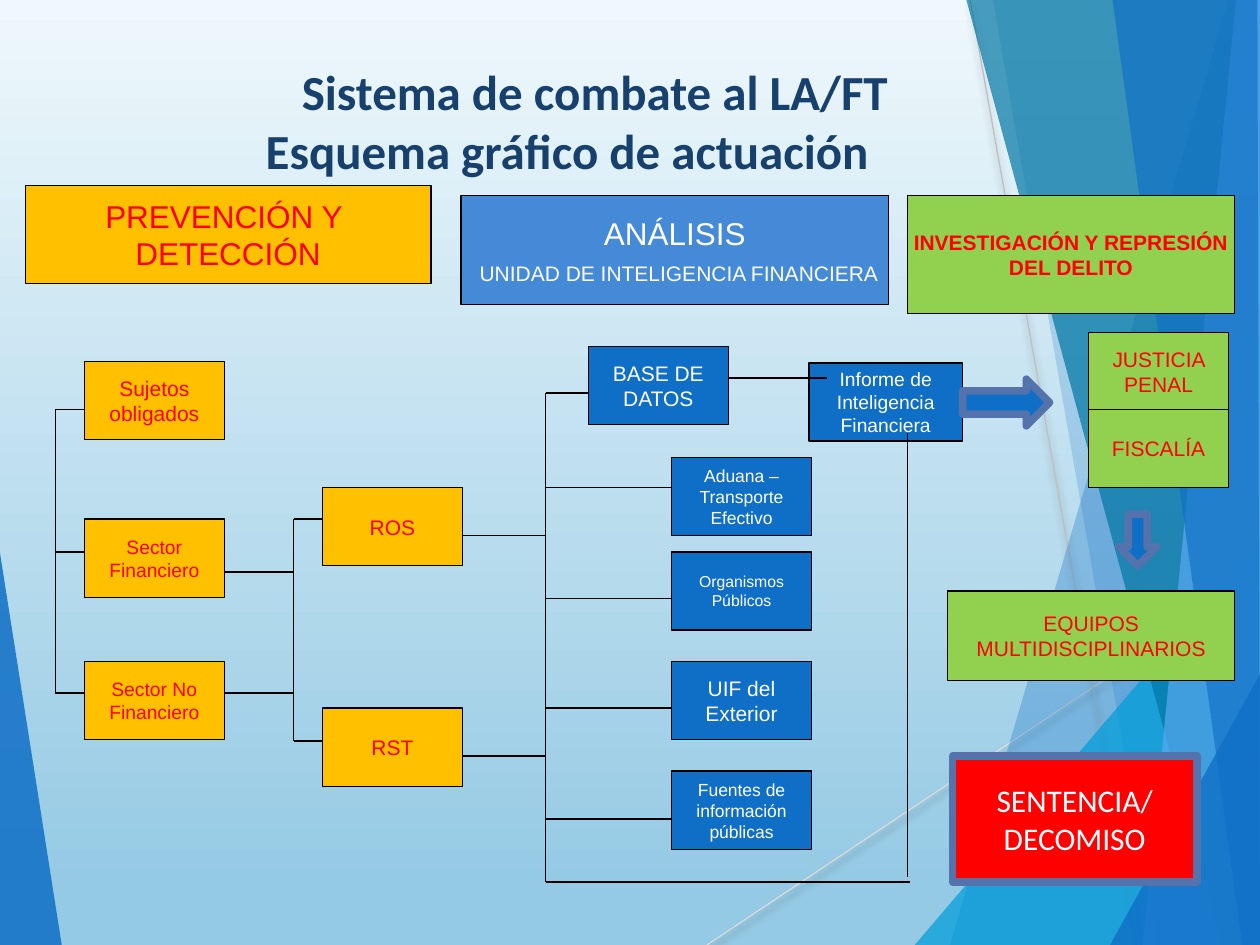
from dataclasses import dataclass

from lxml.etree import SubElement
from pptx import Presentation
from pptx.dml.color import RGBColor
from pptx.enum.shapes import MSO_CONNECTOR, MSO_SHAPE
from pptx.enum.text import MSO_ANCHOR, PP_ALIGN
from pptx.oxml.ns import qn
from pptx.util import Pt

PX = 9144
WIDE, HIGH = 1000, 750
GOLD, BLUE, SKY, GREEN = "FFC000", "0F6FC6", "448AD7", "92D050"
RED, WHITE, BLACK, NAVY, SLATE = "FF0000", "FFFFFF", "000000", "17406D", "5472AC"
THICK = 4.33


@dataclass
class Facet:
    points: list[tuple[int, int]]
    color: str
    alpha: int


@dataclass
class Box:
    text: str
    left: int
    top: int
    fill: str
    ink: str
    size: int = 12
    width: int = 111
    height: int = 62
    bold: bool = False
    wrap: bool = True
    font: str = "Arial"
    edge: str = BLACK
    weight: float = 0.75


@dataclass
class Wire:
    x1: int
    y1: int
    x2: int
    y2: int
    color: str = BLACK
    glow: bool = False


@dataclass
class Arrow:
    kind: MSO_SHAPE
    left: int
    top: int
    width: int
    height: int


def rgb(code: str) -> RGBColor:
    return RGBColor.from_string(code)


def paint(shape, fill: str, edge: str, weight: float) -> None:
    shape.shadow.inherit = False
    shape.fill.solid()
    shape.fill.fore_color.rgb = rgb(fill)
    shape.line.color.rgb = rgb(edge)
    shape.line.width = Pt(weight)


def style(part, font: str, size: int, color: str, bold: bool) -> None:
    part.alignment = PP_ALIGN.CENTER
    for run in part.runs:
        run.font.name = font
        run.font.size = Pt(size)
        run.font.bold = bold
        run.font.color.rgb = rgb(color)


def indent(part, gap: int) -> None:
    part._p.get_or_add_pPr().set("marL", str(gap * PX))


def draw_facet(slide, facet: Facet) -> None:
    start, *rest = facet.points
    pen = slide.shapes.build_freeform(*start, scale=PX)
    pen.add_line_segments(rest, close=True)
    shape = pen.convert_to_shape()
    paint(shape, facet.color, facet.color, 0)
    shape.line.fill.background()
    tone = shape.fill._xPr.find(f"{qn('a:solidFill')}/{qn('a:srgbClr')}")
    SubElement(tone, qn("a:alpha"), val=str(facet.alpha * 1000))


def draw_box(slide, box: Box):
    shape = slide.shapes.add_shape(
        MSO_SHAPE.RECTANGLE, box.left * PX, box.top * PX, box.width * PX, box.height * PX)
    paint(shape, box.fill, box.edge, box.weight)
    frame = shape.text_frame
    frame.text = box.text
    frame.word_wrap = box.wrap
    frame.vertical_anchor = MSO_ANCHOR.MIDDLE
    frame.margin_left = frame.margin_right = 15 * PX
    frame.margin_top = frame.margin_bottom = 7 * PX
    for part in frame.paragraphs:
        style(part, box.font, box.size, box.ink, box.bold)
    return shape


def draw_wire(slide, wire: Wire) -> None:
    line = slide.shapes.add_connector(
        MSO_CONNECTOR.STRAIGHT, wire.x1 * PX, wire.y1 * PX, wire.x2 * PX, wire.y2 * PX)
    line.line.color.rgb = rgb(wire.color)
    line.line.width = Pt(0.75)
    effect = SubElement(line._element.spPr, qn("a:effectLst"))
    if wire.glow:
        shade = SubElement(effect, qn("a:outerShdw"), blurRad=str(Pt(4)),
                           dist=str(Pt(3)), dir="5400000", rotWithShape="0")
        tone = SubElement(shade, qn("a:srgbClr"), val=BLACK)
        SubElement(tone, qn("a:alpha"), val="35000")


def draw_arrow(slide, arrow: Arrow) -> None:
    shape = slide.shapes.add_shape(
        arrow.kind, arrow.left * PX, arrow.top * PX, arrow.width * PX, arrow.height * PX)
    paint(shape, BLUE, SLATE, THICK)


def draw_title(slide) -> None:
    frame = slide.shapes.add_textbox(0, 17 * PX, 900 * PX, 130 * PX).text_frame
    frame.word_wrap = True
    frame.vertical_anchor = MSO_ANCHOR.BOTTOM
    frame.text = "Sistema de combate al LA/FT\nEsquema gráfico de actuación"
    for part in frame.paragraphs:
        style(part, "Calibri", 28, NAVY, True)
    indent(frame.paragraphs[0], 44)


def draw_back(slide) -> None:
    fill = slide.background.fill
    fill.gradient()
    fill.gradient_angle = 270
    for stop, (spot, code) in zip(fill.gradient_stops, [(0, "EFF8FC"), (0.94, "95CAE4")]):
        stop.position = spot
        stop.color.rgb = rgb(code)


LEFT = Facet([(0, 439), (49, HIGH), (0, HIGH)], BLUE, 85)
RAYS = [Wire(561, 750, 1000, 457, "D9D9D9", True), Wire(770, 0, 904, 750, "BFBFBF", True)]
END = (WIDE, HIGH)
TOP = (WIDE, 0)
FACETS = [
    Facet([(975, 0), (754, HIGH), END, TOP], BLUE, 30),
    Facet([(788, 0), (919, HIGH), END, TOP], BLUE, 20),
    Facet([(726, HIGH), (WIDE, 429), END], "009DD9", 72),
    Facet([(767, 0), (970, HIGH), END, TOP], "0076A3", 70),
    Facet([(981, 0), (907, HIGH), END, TOP], "59AAF2", 70),
    Facet([(883, 0), (986, HIGH), END, (998, 0)], BLUE, 65),
    Facet([(881, HIGH), (WIDE, 535), END], BLUE, 80),
]
UNIT = Box("ANÁLISIS\nUNIDAD DE INTELIGENCIA FINANCIERA", 366, 155, SKY, WHITE, 18, 339, 87,
           wrap=False)
BOXES = [
    Box("PREVENCIÓN Y \nDETECCIÓN", 20, 147, GOLD, RED, 18, 322, 78, wrap=False),
    Box("INVESTIGACIÓN Y REPRESIÓN\nDEL DELITO", 720, 155, GREEN, RED, 12, 260, 94,
        bold=True, wrap=False),
    Box("Sujetos obligados", 67, 287, GOLD, RED),
    Box("Sector Financiero", 67, 412, GOLD, RED, 11),
    Box("Sector No Financiero", 67, 525, GOLD, RED, 11),
    Box("ROS", 256, 387, GOLD, RED),
    Box("RST", 256, 562, GOLD, RED),
    Box("BASE DE DATOS", 467, 275, BLUE, WHITE),
    Box("Aduana – Transporte Efectivo", 533, 363, BLUE, WHITE, 10),
    Box("Organismos Públicos", 533, 438, BLUE, WHITE, 9),
    Box("UIF del Exterior", 533, 525, BLUE, WHITE),
    Box("Fuentes de información públicas", 533, 612, BLUE, WHITE, 10),
    Box("Informe de Inteligencia Financiera", 642, 288, BLUE, WHITE, 11, 122),
    Box("JUSTICIA PENAL", 864, 264, GREEN, RED),
    Box("FISCALÍA", 864, 325, GREEN, RED),
    Box("EQUIPOS MULTIDISCIPLINARIOS", 752, 469, GREEN, RED, 12, 228, 71),
    Box("SENTENCIA/\nDECOMISO", 756, 600, RED, WHITE, 18, 194, 100,
        font="Calibri", edge=SLATE, weight=THICK),
]
WIRES = [
    Wire(44, 325, 44, 550), *[Wire(44, y, 67, y) for y in (325, 438, 550)],
    Wire(233, 412, 233, 588), *[Wire(233, y, 256, y) for y in (412, 588)],
    *[Wire(178, y, 233, y) for y in (454, 550)],
    Wire(433, 312, 433, 700), Wire(433, 312, 467, 312),
    *[Wire(367, y, 433, y) for y in (425, 600)],
    *[Wire(433, y, 533, y) for y in (387, 475, 562, 650)],
    Wire(578, 300, 656, 300), Wire(720, 344, 720, 696), Wire(433, 700, 722, 700),
]
ARROWS = [
    Arrow(MSO_SHAPE.RIGHT_ARROW, 764, 301, 69, 37),
    Arrow(MSO_SHAPE.DOWN_ARROW, 888, 408, 30, 41),
]


def main() -> None:
    deck = Presentation()
    deck.slide_width, deck.slide_height = WIDE * PX, HIGH * PX
    slide = deck.slides.add_slide(deck.slide_layouts[6])
    draw_back(slide)
    draw_facet(slide, LEFT)
    for ray in RAYS:
        draw_wire(slide, ray)
    for facet in FACETS:
        draw_facet(slide, facet)
    draw_title(slide)
    unit = draw_box(slide, UNIT).text_frame.paragraphs[1]
    style(unit, UNIT.font, 12, WHITE, False)
    unit.space_before = Pt(5)
    indent(unit, 7)
    for box in BOXES:
        draw_box(slide, box)
    for wire in WIRES:
        draw_wire(slide, wire)
    for arrow in ARROWS:
        draw_arrow(slide, arrow)
    deck.save("out.pptx")


if __name__ == "__main__":
    main()
